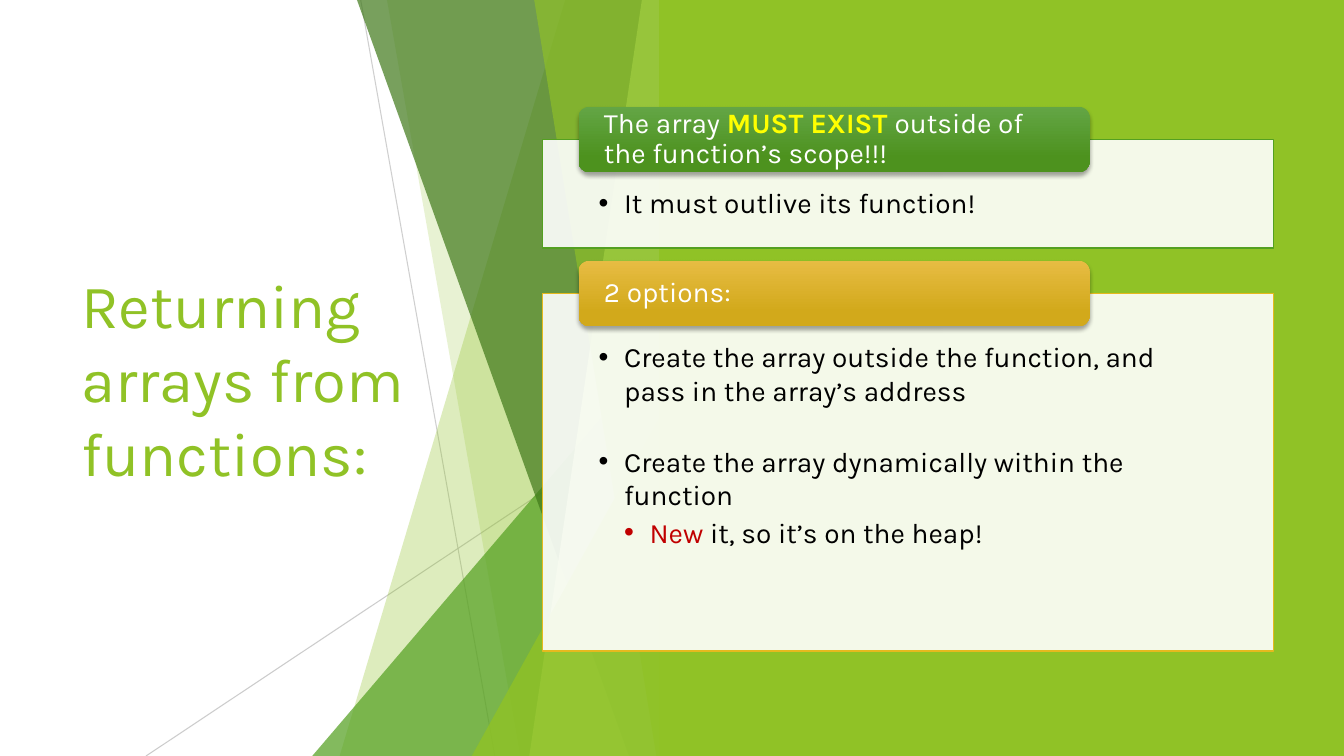
"""Build the slide on returning arrays from functions."""
from typing import NamedTuple

from lxml.etree import SubElement as Sub
from pptx import Presentation
from pptx.dml.color import RGBColor
from pptx.enum.shapes import MSO_CONNECTOR as Link, MSO_SHAPE as Kind
from pptx.enum.text import MSO_ANCHOR as Anchor, PP_ALIGN as Align
from pptx.oxml.ns import qn
from pptx.shapes.autoshape import Shape
from pptx.slide import Slide
from pptx.text.text import TextFrame, _Paragraph as Para
from pptx.util import Cm, Pt

WIDE, HIGH = 33.87, 19.05
EDGE, TOP = 16.92, -0.02
LIME, GREEN, GOLD = "90C226", "54A021", "E6B91E"
WHITE, BLACK = "FFFFFF", "000000"


class Ray(NamedTuple):
    start: tuple[float, float]
    end: tuple[float, float]
    alpha: int


class Facet(NamedTuple):
    top: float
    base: float
    color: str
    alpha: int


class Wedge(NamedTuple):
    left: float
    top: float
    color: str
    alpha: int


class Run(NamedTuple):
    text: str
    color: str = BLACK
    bold: bool = False


class Item(NamedTuple):
    runs: list[Run]
    level: int = 1
    after: float = 3


class Panel(NamedTuple):
    top: float
    height: float
    edge: str
    shades: tuple[str, str]
    head: list[Run]
    items: list[Item]


RAYS = [
    Ray((9.09, 0), (12.47, HIGH), 75),
    Ray((EDGE, 10.24), (3.68, HIGH), 80),
]
LAYERS = [
    Facet(14.25, 8.56, LIME, 30),
    Facet(9.75, 13.11, LIME, 20),
    Wedge(7.87, 8.46, GREEN, 72),
    Facet(8.99, 15.85, "3F7819", 70),
    Facet(16.18, 13.34, "C0E474", 70),
    Facet(13.46, 16.54, LIME, 65),
    Wedge(11.89, 9.98, LIME, 80),
]
PANELS = [
    Panel(3.51, 2.74, GREEN, ("63A545", "4D921E"),
          [Run("The array ", WHITE), Run("MUST EXIST ", "FFFF00", True),
           Run("outside of the function’s scope!!!", WHITE)],
          [Item([Run("It must outlive its function!")])]),
    Panel(7.39, 9.02, GOLD, ("E7BC43", "D2A91B"),
          [Run("2 options:", WHITE)],
          [Item([Run("Create the array outside the function, "
                     "and pass in the array’s address")], after=26.5),
           Item([Run("Create the array dynamically within the function")]),
           Item([Run("New", "C00000"), Run(" it, so it’s on the heap!")], 2)]),
]


def tint(code: str) -> RGBColor:
    return RGBColor.from_string(code)


def fade(shape: Shape, alpha: int) -> None:
    for color in shape.element.spPr.iter(qn("a:srgbClr")):
        Sub(color, qn("a:alpha"), val=str(alpha * 1000))


def paint(shape: Shape, code: str, alpha: int = 100) -> None:
    shape.shadow.inherit = False
    shape.fill.solid()
    shape.fill.fore_color.rgb = tint(code)
    shape.line.fill.background()
    if alpha < 100:
        fade(shape, alpha)


def add_box(slide: Slide, kind: Kind, left: float, top: float,
            width: float, height: float) -> Shape:
    return slide.shapes.add_shape(kind, Cm(left), Cm(top), Cm(width), Cm(height))


def add_ray(slide: Slide, ray: Ray) -> None:
    line = slide.shapes.add_connector(
        Link.STRAIGHT, *map(Cm, ray.start), *map(Cm, ray.end))
    line.line.color.rgb = tint("BFBFBF")
    line.line.width = Pt(0.75)
    fade(line, ray.alpha)
    Sub(line.element.spPr, qn("a:effectLst"))


def add_facet(slide: Slide, facet: Facet) -> None:
    path = slide.shapes.build_freeform(Cm(facet.top), Cm(TOP))
    ends = [(EDGE, TOP), (EDGE, HIGH), (facet.base, HIGH)]
    path.add_line_segments([(Cm(x), Cm(y)) for x, y in ends], close=True)
    paint(path.convert_to_shape(), facet.color, facet.alpha)


def add_wedge(slide: Slide, wedge: Wedge) -> None:
    shape = add_box(slide, Kind.ISOSCELES_TRIANGLE, wedge.left, wedge.top,
                    EDGE - wedge.left, HIGH - wedge.top)
    shape.adjustments[0] = 1
    paint(shape, wedge.color, wedge.alpha)


def add_runs(para: Para, runs: list[Run], size: float = 20) -> None:
    para.alignment = Align.LEFT
    for text, color, bold in runs:
        run = para.add_run()
        run.text = text
        run.font.name = "Karla"
        run.font.size = Pt(size)
        run.font.bold = bold
        run.font.color.rgb = tint(color)


def set_frame(frame: TextFrame, anchor: Anchor, side: float,
              top: float, base: float) -> None:
    frame.word_wrap = True
    frame.vertical_anchor = anchor
    frame.margin_left = frame.margin_right = Cm(side)
    frame.margin_top, frame.margin_bottom = Cm(top), Cm(base)


def add_item(para: Para, item: Item) -> None:
    add_runs(para, item.runs)
    para.space_after = Pt(item.after)
    props = para._p.get_or_add_pPr()
    step = Cm(0.64)
    props.set("marL", str(step * item.level))
    props.set("indent", str(-step))
    Sub(props, qn("a:buFont"), typeface="Arial")
    Sub(props, qn("a:buChar"), char="•")


def add_head(slide: Slide, panel: Panel) -> None:
    shape = add_box(slide, Kind.ROUNDED_RECTANGLE, 14.58, panel.top - 0.82, 12.88, 1.65)
    shape.line.fill.background()
    shape.fill.gradient()
    shape.fill.gradient_angle = 270
    for stop, place, code in zip(shape.fill.gradient_stops, (0, 0.78), panel.shades):
        stop.position = place
        stop.color.rgb = tint(code)
    shape.shadow.inherit = False
    glow = Sub(shape.element.spPr.find(qn("a:effectLst")), qn("a:outerShdw"),
               blurRad=str(Pt(3)), dist=str(Pt(2)), dir="5400000", rotWithShape="0")
    color = Sub(glow, qn("a:srgbClr"), val=BLACK)
    Sub(color, qn("a:alpha"), val="35000")
    set_frame(shape.text_frame, Anchor.MIDDLE, 0.56, 0.08, 0.08)
    para = shape.text_frame.paragraphs[0]
    para.line_spacing = 0.9
    add_runs(para, panel.head)


def add_panel(slide: Slide, panel: Panel) -> None:
    shape = add_box(slide, Kind.RECTANGLE, 13.67, panel.top, 18.42, panel.height)
    paint(shape, WHITE, 90)
    shape.line.color.rgb = tint(panel.edge)
    shape.line.width = Pt(1)
    frame = shape.text_frame
    set_frame(frame, Anchor.TOP, 1.42, 1.17, 0.41)
    for i, item in enumerate(panel.items):
        add_item(frame.add_paragraph() if i else frame.paragraphs[0], item)
    add_head(slide, panel)


def main() -> None:
    deck = Presentation()
    deck.slide_width, deck.slide_height = Cm(WIDE), Cm(HIGH)
    slide = deck.slides.add_slide(deck.slide_layouts[6])
    title = slide.shapes.add_textbox(Cm(1.8), Cm(3.84), Cm(9.86), Cm(11.38))
    set_frame(title.text_frame, Anchor.MIDDLE, 0.25, 0.13, 0.13)
    add_runs(title.text_frame.paragraphs[0],
             [Run("Returning arrays from functions:", LIME)], 44)
    for ray in RAYS:
        add_ray(slide, ray)
    for layer in LAYERS:
        if isinstance(layer, Facet):
            add_facet(slide, layer)
        else:
            add_wedge(slide, layer)
    paint(add_box(slide, Kind.RECTANGLE, 16.61, 0, WIDE - 16.61, HIGH), LIME)
    for panel in PANELS:
        add_panel(slide, panel)
    deck.save("out.pptx")


if __name__ == "__main__":
    main()
